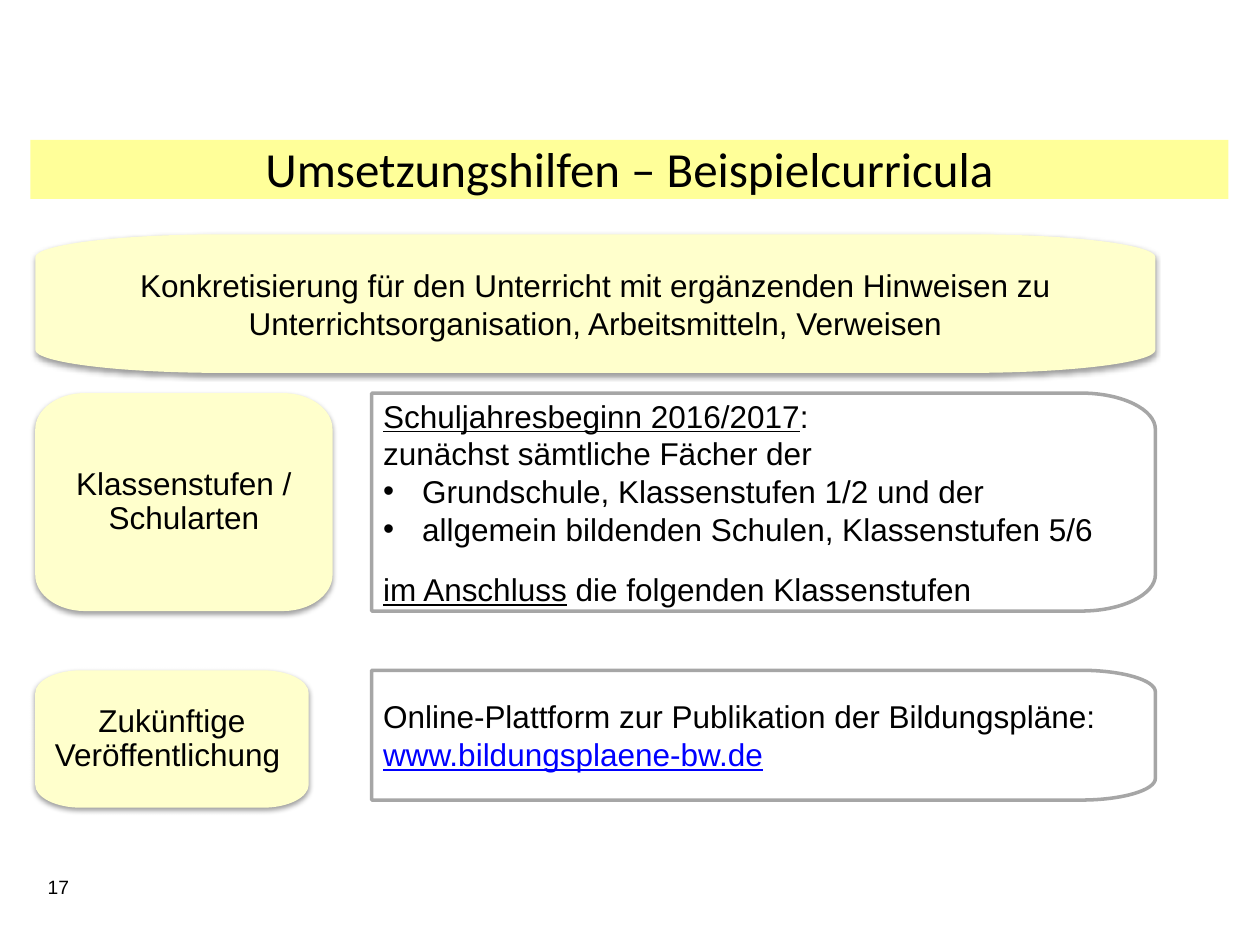
from copy import deepcopy
from dataclasses import dataclass

from lxml.etree import SubElement
from pptx import Presentation
from pptx.dml.color import RGBColor
from pptx.enum.shapes import MSO_SHAPE as Shape
from pptx.enum.text import MSO_ANCHOR as Anchor, PP_ALIGN as Align
from pptx.oxml.ns import qn
from pptx.util import Inches, Pt


@dataclass(frozen=True)
class Theme:
    band: RGBColor = RGBColor(0xFF, 0xFF, 0x99)
    card: RGBColor = RGBColor(0xFF, 0xFF, 0xCC)
    panel: RGBColor = RGBColor(0xFF, 0xFF, 0xFF)
    edge: RGBColor = RGBColor(0xA6, 0xA6, 0xA6)
    ink: RGBColor = RGBColor(0, 0, 0)
    link: RGBColor = RGBColor(0, 0, 0xFF)
    heading: str = "Calibri"
    body: str = "Arial"
    title_size: float = 28
    body_size: float = 18
    number_size: float = 11


THEME = Theme()
LEFT, PANEL_LEFT, RIGHT = 0.28, 2.95, 9.17
CURVE = 0.55  # share of the way to the corner for a quarter ellipse


def style_span(span, size, name=THEME.body, color=THEME.ink, underline=None):
    font = span.font
    font.size, font.name, font.underline = Pt(size), name, underline
    font.color.rgb = color


def set_insets(frame, left, top, right, bottom):
    frame.margin_left, frame.margin_top = Inches(left), Inches(top)
    frame.margin_right, frame.margin_bottom = Inches(right), Inches(bottom)
    frame.word_wrap = True
    frame.vertical_anchor = Anchor.MIDDLE


def curve_corner(before, corner, after):
    """Turn the two lines that meet at a corner into one curve."""
    tip, end = corner[0], after[0]
    curve = SubElement(corner.getparent(), qn("a:cubicBezTo"))
    for anchor in (before[-1], end):
        control = deepcopy(tip)
        for axis in ("x", "y"):
            start, goal = int(anchor.get(axis)), int(tip.get(axis))
            control.set(axis, str(round(start + CURVE * (goal - start))))
        curve.append(control)
    curve.append(end)
    corner.addprevious(curve)
    for line in (corner, after):
        line.getparent().remove(line)


def rounded_box(page, left, top, width, height, radius, right_only=False):
    """Box with elliptical corners, one sixth of the height tall."""
    right, bottom, rise = left + width, top + height, height / 6
    lower_right = [(right, bottom - rise), (right, bottom), (right - radius, bottom)]
    upper_right = [(right - radius, top), (right, top), (right, top + rise)]
    if right_only:
        left_side = [(left, bottom), (left, top)]
        corners = [2, 6]
    else:
        left_side = [(left + radius, bottom), (left, bottom), (left, bottom - rise),
                     (left, top + rise), (left, top), (left + radius, top)]
        corners = [2, 5, 8, 11]
    points = [(Inches(x), Inches(y)) for x, y in
              upper_right[-1:] + lower_right + left_side + upper_right]
    builder = page.shapes.build_freeform(*points[0])
    builder.add_line_segments(points[1:], close=True)
    box = builder.convert_to_shape()
    if right_only:
        corners = [2, 7]
    steps = list(next(box._element.iter(qn("a:path"))))
    for index in corners:
        curve_corner(*steps[index - 1:index + 2])
    box.shadow.inherit = False
    box.fill.solid()
    return box


def add_shadow(box):
    effects = box._element.spPr.find(qn("a:effectLst"))
    shadow = SubElement(effects, qn("a:outerShdw"), blurRad=str(Pt(3.1)),
                        dist=str(Pt(1.6)), dir="5400000", rotWithShape="0")
    black = SubElement(shadow, qn("a:srgbClr"), val="000000")
    SubElement(black, qn("a:alpha"), val="38000")


def add_bullet(para):
    properties = para._p.get_or_add_pPr()
    properties.set("marL", str(Inches(0.31)))
    properties.set("indent", str(-Inches(0.31)))
    SubElement(properties, qn("a:buFont"), typeface=THEME.body)
    SubElement(properties, qn("a:buChar"), char="•")


def add_card(page, top, width, height, text, line_spacing=None):
    box = rounded_box(page, LEFT, top, width, height, width / 6)
    box.fill.fore_color.rgb = THEME.card
    box.line.fill.background()
    add_shadow(box)
    frame = box.text_frame
    set_insets(frame, 0.15, 0.11, 0.15, 0.11)
    para = frame.paragraphs[0]
    para.text = text
    para.alignment = Align.CENTER
    para.line_spacing = line_spacing
    style_span(para.runs[0], THEME.body_size)


def add_panel(page, top, height, lines):
    """Each line is a list of (text, style) spans."""
    box = rounded_box(page, PANEL_LEFT, top, RIGHT - PANEL_LEFT, height, 0.59, True)
    box.fill.fore_color.rgb = THEME.panel
    box.line.color.rgb = THEME.edge
    box.line.width = Pt(2)
    frame = box.text_frame
    set_insets(frame, 0.09, 0.18, 0.22, 0.18)
    for index, line in enumerate(lines):
        para = frame.add_paragraph() if index else frame.paragraphs[0]
        para.alignment = Align.LEFT
        for text, style in line:
            span = para.add_run()
            span.text = text
            style_span(span, THEME.body_size, **style)
    return frame.paragraphs


def add_title(page, text):
    band = page.shapes.add_shape(Shape.RECTANGLE, Inches(0.24), Inches(1.11),
                                 Inches(9.51), Inches(0.47))
    band.shadow.inherit = False
    band.fill.solid()
    band.fill.fore_color.rgb = THEME.band
    band.line.fill.background()
    title = page.shapes.title
    title._element.addprevious(band._element)  # the band lies behind the title
    title.left, title.top = Inches(0.24), Inches(1.05)
    title.width, title.height = Inches(9.51), Inches(0.57)
    frame = title.text_frame
    frame.text = text
    set_insets(frame, 0.1, 0.05, 0.1, 0.05)
    frame.paragraphs[0].alignment = Align.CENTER
    style_span(frame.paragraphs[0].runs[0], THEME.title_size, THEME.heading)


def add_page_number(page, number):
    box = page.shapes.add_textbox(Inches(0.28), Inches(6.9), Inches(0.55), Inches(0.29))
    frame = box.text_frame
    frame.word_wrap = True
    frame.text = number
    style_span(frame.paragraphs[0].runs[0], THEME.number_size)


def main():
    deck = Presentation()
    deck.slide_width, deck.slide_height = Inches(10), Inches(7.5)
    page = deck.slides.add_slide(deck.slide_layouts[5])
    plain, underlined = {}, {"underline": True}

    add_title(page, "Umsetzungshilfen – Beispielcurricula")
    add_page_number(page, "17")

    # Grades and school types, with the summary above them
    paras = add_panel(page, 3.12, 1.73, [
        [("Schuljahresbeginn 2016/2017", underlined), (":", plain)],
        [("zunächst sämtliche Fächer der", plain)],
        [("Grundschule, Klassenstufen 1/2 und der", plain)],
        [("allgemein bildenden Schulen, Klassenstufen 5/6", plain)],
        [("im Anschluss", underlined), (" die folgenden Klassenstufen", plain)],
    ])
    for para in paras[2:4]:
        add_bullet(para)
    paras[4].space_before = Pt(12.6)
    add_card(page, 1.86, RIGHT - LEFT, 1.1,
             "Konkretisierung für den Unterricht mit ergänzenden Hinweisen zu "
             "Unterrichtsorganisation, Arbeitsmitteln, Verweisen")
    add_card(page, 3.12, 2.36, 1.73, "Klassenstufen / Schularten", 0.9)

    # Publication
    add_card(page, 5.32, 2.17, 1.09, "Zukünftige Veröffentlichung ", 0.9)
    add_panel(page, 5.32, 1.03, [
        [("Online-Plattform zur Publikation der Bildungspläne:", plain)],
        [("www.bildungsplaene-bw.de", {"color": THEME.link, "underline": True})],
    ])

    deck.save("out.pptx")


if __name__ == "__main__":
    main()
